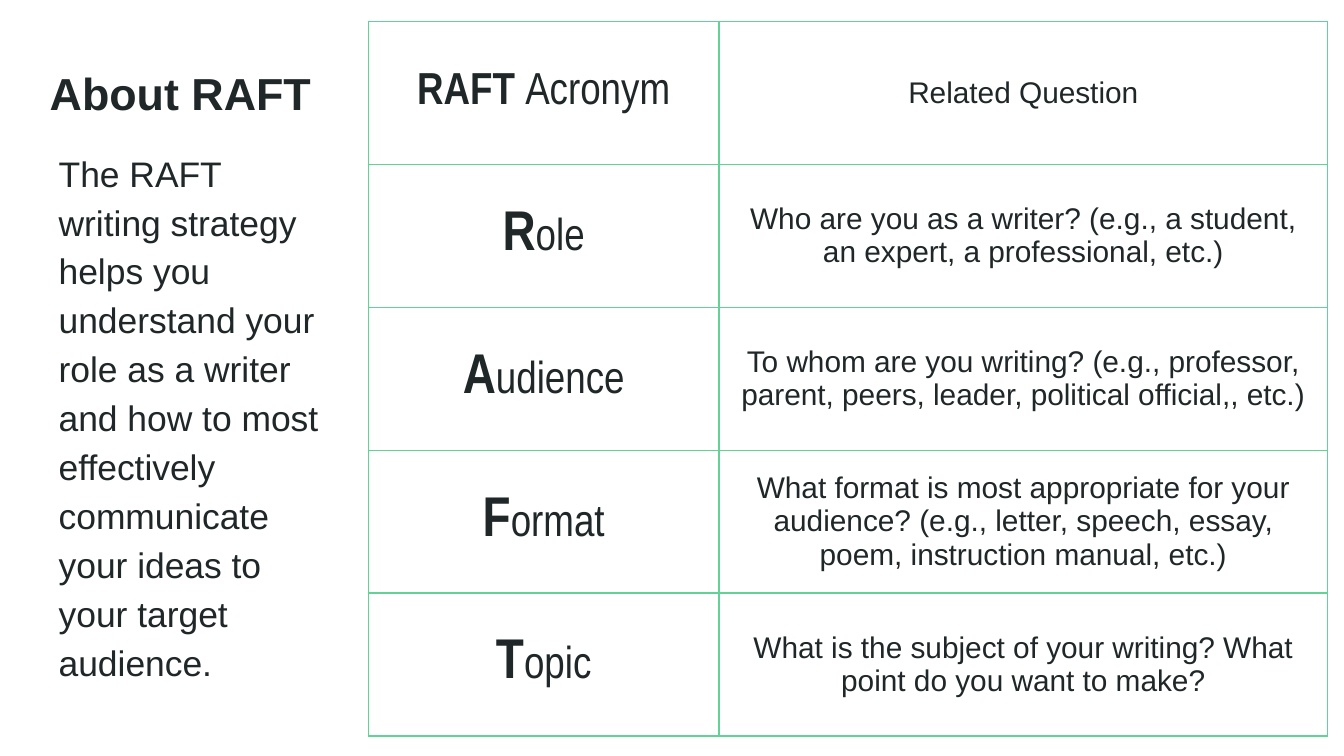
"""Build the RAFT writing strategy slide with its acronym table."""
from lxml.etree import SubElement
from pptx import Presentation
from pptx.dml.color import RGBColor as Color
from pptx.enum.text import MSO_ANCHOR as Anchor, PP_ALIGN as Align
from pptx.oxml.ns import qn
from pptx.util import Cm, Pt

COLORS = {"text": "202729", "border": "63D297", "background": "FFFFFF"}
FORMATS = {
    "title": {"name": "Arial", "size": Pt(24), "bold": True},
    "body": {"name": "Arial", "size": Pt(19), "bold": False},
    "question": {"name": "Arial", "size": Pt(16), "bold": False},
    "initial": {"name": "Arial Narrow", "size": Pt(30), "bold": True},
    "acronym": {"name": "Arial Narrow", "size": Pt(24), "bold": True},
    "word": {"name": "Arial Narrow", "size": Pt(24), "bold": False},
}
TITLE = "About RAFT"
BODY = ("The RAFT writing strategy helps you understand your role as a writer "
        "and how to most effectively communicate your ideas to your target audience.")
HEADER = ([("RAFT ", "acronym"), ("Acronym", "word")], "Related Question")
QUESTIONS = [
    ("Role", "Who are you as a writer? (e.g., a student, an expert, a professional, etc.)"),
    ("Audience", "To whom are you writing? (e.g., professor, parent, peers, leader, "
                 "political official,, etc.)"),
    ("Format", "What format is most appropriate for your audience? (e.g., letter, speech, "
               "essay, poem, instruction manual, etc.)"),
    ("Topic", "What is the subject of your writing? What point do you want to make?"),
]
COLUMN_WIDTHS = (6.63, 11.5)
ROW_HEIGHT = 2.7
INSET = Cm(0.25)
MARGINS = {f"margin_{side}": INSET for side in ("left", "right", "top", "bottom")}


def set_all(target, values):
    for name, value in values.items():
        setattr(target, name, value)


def add_runs(paragraph, runs):
    for text, style in runs:
        run = paragraph.add_run()
        run.text = text
        set_all(run.font, FORMATS[style])
        run.font.color.rgb = Color.from_string(COLORS["text"])


def add_text(slide, box, text, style, anchor, paragraph_format):
    frame = slide.shapes.add_textbox(*map(Cm, box)).text_frame
    set_all(frame, {"word_wrap": True, "vertical_anchor": anchor, **MARGINS})
    set_all(frame.paragraphs[0], paragraph_format)
    add_runs(frame.paragraphs[0], [(text, style)])


def add_borders(cell):
    properties = cell._tc.get_or_add_tcPr()
    for index, side in enumerate(("lnL", "lnR", "lnT", "lnB")):
        line = properties.makeelement(qn(f"a:{side}"), {"w": str(Pt(0.75))})
        fill = SubElement(line, qn("a:solidFill"))
        SubElement(fill, qn("a:srgbClr"), val=COLORS["border"])
        properties.insert(index, line)


def fill_cell(cell, runs):
    set_all(cell, {"vertical_anchor": Anchor.MIDDLE, **MARGINS})
    cell.fill.background()
    paragraph = cell.text_frame.paragraphs[0]
    paragraph.alignment = Align.CENTER
    add_runs(paragraph, runs)
    add_borders(cell)


def add_raft_table(slide):
    rows = [HEADER] + [([(word[0], "initial"), (word[1:], "word")], question)
                       for word, question in QUESTIONS]
    table = slide.shapes.add_table(
        len(rows), len(COLUMN_WIDTHS), Cm(6.96), Cm(0.41),
        Cm(sum(COLUMN_WIDTHS)), Cm(ROW_HEIGHT * len(rows))).table
    set_all(table, {"first_row": False, "horz_banding": False})
    for column, width in zip(table.columns, COLUMN_WIDTHS):
        column.width = Cm(width)
    for row, (term, question) in zip(table.rows, rows):
        row.height = Cm(ROW_HEIGHT)
        for cell, runs in zip(row.cells, (term, [(question, "question")])):
            fill_cell(cell, runs)


def main():
    presentation = Presentation()
    set_all(presentation, {"slide_width": Cm(25.4), "slide_height": Cm(14.29)})
    slide = presentation.slides.add_slide(presentation.slide_layouts[6])
    slide.background.fill.solid()
    slide.background.fill.fore_color.rgb = Color.from_string(COLORS["background"])
    add_text(slide, (0.69, 0.41, 7.44, 2.1), TITLE, "title", Anchor.BOTTOM, {})
    add_text(slide, (0.86, 2.5, 5.42, 10.57), BODY, "body", Anchor.TOP,
             {"line_spacing": 1.15, "space_after": Pt(12)})
    add_raft_table(slide)
    presentation.save("out.pptx")


if __name__ == "__main__":
    main()
